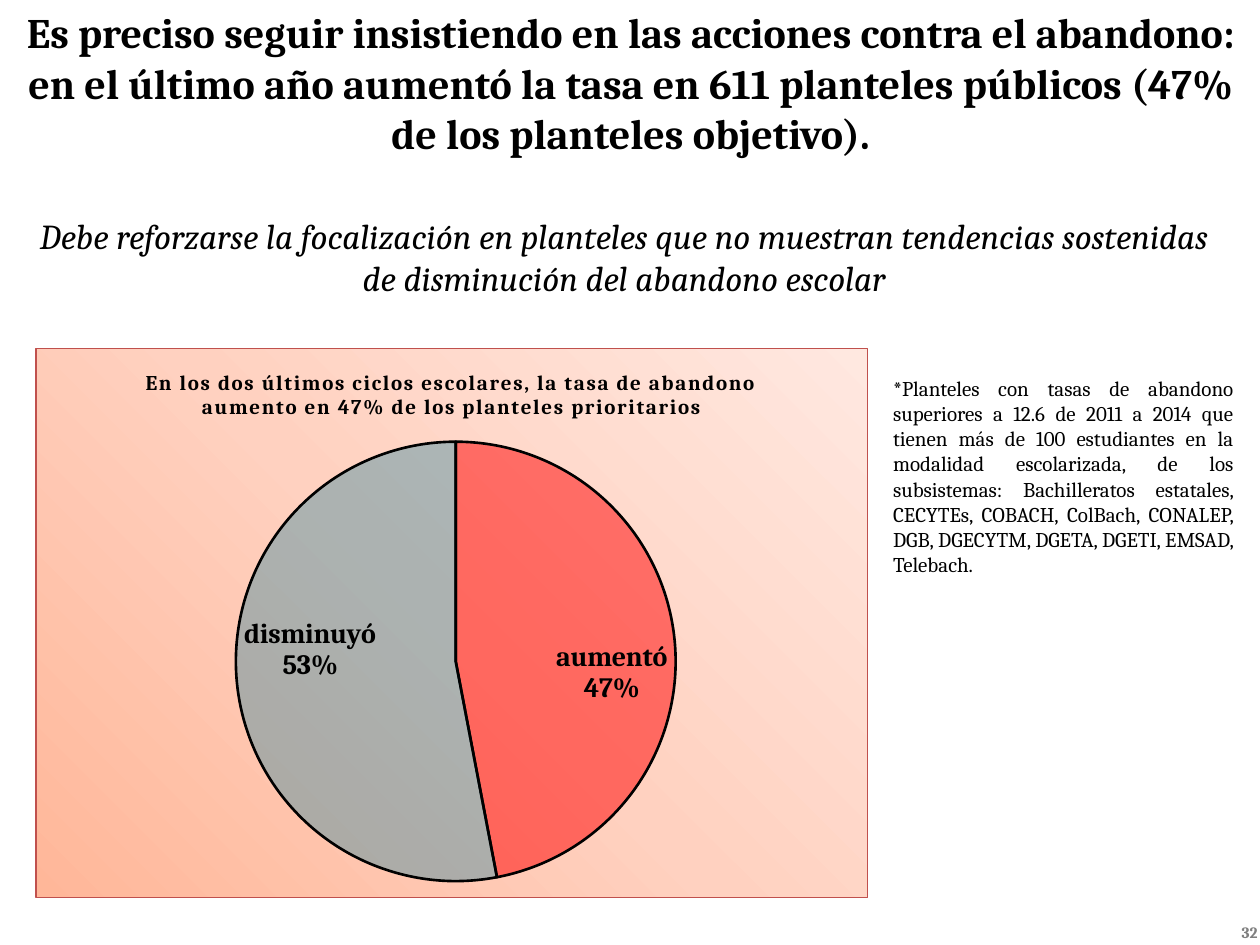
from dataclasses import dataclass, field

from lxml import etree
from pptx import Presentation
from pptx.chart.data import CategoryChartData
from pptx.dml.color import RGBColor
from pptx.enum.chart import XL_CHART_TYPE, XL_LABEL_POSITION
from pptx.enum.text import MSO_ANCHOR, PP_ALIGN
from pptx.oxml import parse_xml
from pptx.oxml.ns import nsdecls, qn
from pptx.util import Inches, Pt

FONT = "Cambria"
BLACK = RGBColor(0x00, 0x00, 0x00)
GRAY = RGBColor(0x80, 0x80, 0x80)
RED = RGBColor(0xFF, 0x00, 0x00)
TEAL = RGBColor(0x31, 0x85, 0x9C)
BORDER = RGBColor(0xC0, 0x50, 0x4D)
PEACH_STOPS = (
    (0, RGBColor(0xFF, 0xB7, 0x99)),
    (50, RGBColor(0xFF, 0xD1, 0xC0)),
    (100, RGBColor(0xFF, 0xE8, 0xE0)),
)


@dataclass
class TextBlock:
    text: str
    box: tuple[float, float, float, float]
    align: PP_ALIGN
    font: dict = field(default_factory=dict)
    anchor: MSO_ANCHOR = MSO_ANCHOR.TOP


@dataclass
class Slice:
    name: str
    percent: int
    color: RGBColor
    opacity: int


TEXTS = (
    TextBlock(
        "Es preciso seguir insistiendo en las acciones contra el abandono: en el "
        "último año aumentó la tasa en 611 planteles públicos (47% de los "
        "planteles objetivo).",
        (0.06, 0, 9.89, 1.31), PP_ALIGN.CENTER,
        {"size": Pt(24), "bold": True}, MSO_ANCHOR.MIDDLE,
    ),
    TextBlock(
        "*Planteles con tasas de abandono superiores a 12.6 de 2011 a 2014 que "
        "tienen más de 100 estudiantes en la modalidad escolarizada, de los "
        "subsistemas: Bachilleratos estatales, CECYTEs, COBACH, ColBach, CONALEP, "
        "DGB, DGECYTM, DGETA, DGETI, EMSAD, Telebach.",
        (6.99, 2.93, 2.9, 1.72), PP_ALIGN.JUSTIFY, {"size": Pt(12)},
    ),
    TextBlock(
        "Debe reforzarse la focalización en planteles que no muestran tendencias "
        "sostenidas de disminución del abandono escolar",
        (0.11, 1.65, 9.69, 0.77), PP_ALIGN.CENTER,
        {"size": Pt(20), "italic": True},
    ),
    TextBlock(
        "32", (7.75, 7.29, 2.33, 0.22), PP_ALIGN.RIGHT,
        {"size": Pt(9), "bold": True, "color": GRAY}, MSO_ANCHOR.MIDDLE,
    ),
)
CHART_TITLE = (
    "En los dos últimos ciclos escolares, la tasa de abandono aumento en 47% "
    "de los planteles prioritarios"
)
CHART_BOX = (0.28, 2.76, 6.61, 4.37)
PIE_AREA = {"x": 0.24, "y": 0.17, "w": 0.53, "h": 0.8}
SLICES = (
    Slice("aumentó", 47, RED, 50),
    Slice("disminuyó", 53, TEAL, 40),
)


def set_font(font, color: RGBColor = BLACK, **values) -> None:
    for name, value in {"name": FONT, **values}.items():
        setattr(font, name, value)
    font.color.rgb = color


def add_text(s, block: TextBlock) -> None:
    tf = s.shapes.add_textbox(*map(Inches, block.box)).text_frame
    tf.word_wrap = True
    tf.vertical_anchor = block.anchor
    p = tf.paragraphs[0]
    p.alignment = block.align
    r = p.add_run()
    r.text = block.text
    set_font(r.font, **block.font)


def add_title(chart, text: str) -> None:
    chart.has_title = True
    chart.chart_title.include_in_layout = False
    p = chart.chart_title.text_frame.paragraphs[0]
    r = p.add_run()
    r.text = text
    set_font(r.font, size=Pt(12), bold=True)
    for r_pr in chart.element.iter(qn("a:rPr")):
        r_pr.set("spc", "100")


def place_pie(chart, area: dict[str, float]) -> None:
    plot_area = chart.element.find(".//" + qn("c:plotArea"))
    for layout in plot_area.findall(qn("c:layout")):
        plot_area.remove(layout)
    layout = etree.Element(qn("c:layout"))
    manual = etree.SubElement(layout, qn("c:manualLayout"))
    settings = {"layoutTarget": "inner", "xMode": "edge", "yMode": "edge", **area}
    for name, value in settings.items():
        etree.SubElement(manual, qn(f"c:{name}")).set("val", str(value))
    plot_area.insert(0, layout)


def fill_background(chart) -> None:
    stops = "".join(
        f'<a:gs pos="{pos * 1000}"><a:srgbClr val="{color}"/></a:gs>'
        for pos, color in PEACH_STOPS
    )
    sp_pr = parse_xml(
        f'<c:spPr {nsdecls("c", "a")}><a:gradFill><a:gsLst>{stops}</a:gsLst>'
        f'<a:lin ang="{315 * 60000}" scaled="0"/></a:gradFill>'
        f'<a:ln w="{Pt(0.75)}"><a:solidFill><a:srgbClr val="{BORDER}"/>'
        "</a:solidFill></a:ln></c:spPr>"
    )
    chart.element.find(qn("c:txPr")).addprevious(sp_pr)


def color_slices(chart, slices: tuple[Slice, ...]) -> None:
    points = chart.plots[0].series[0].points
    for i, piece in enumerate(slices):
        fmt = points[i].format
        fmt.fill.solid()
        fmt.fill.fore_color.rgb = piece.color
        fmt.line.color.rgb = BLACK
        fmt.line.width = Pt(1.5)
    fills = chart.element.xpath(".//c:dPt/c:spPr/a:solidFill/a:srgbClr")
    for color, piece in zip(fills, slices):
        etree.SubElement(color, qn("a:alpha")).set("val", str(piece.opacity * 1000))


def add_pie(s, slices: tuple[Slice, ...]) -> None:
    data = CategoryChartData()
    data.categories = [piece.name for piece in slices]
    data.add_series("Series 1", [piece.percent for piece in slices])
    chart = s.shapes.add_chart(
        XL_CHART_TYPE.PIE, *map(Inches, CHART_BOX), data
    ).chart
    chart.has_legend = False
    set_font(chart.font, size=Pt(16))
    add_title(chart, CHART_TITLE)
    place_pie(chart, PIE_AREA)
    fill_background(chart)
    plot = chart.plots[0]
    plot.vary_by_categories = True
    color_slices(chart, slices)
    labels = plot.series[0].data_labels
    options = {
        "show_category_name": True,
        "show_percentage": True,
        "show_value": False,
        "show_legend_key": False,
        "number_format": "0%",
        "number_format_is_linked": False,
        "position": XL_LABEL_POSITION.INSIDE_END,
    }
    for name, value in options.items():
        setattr(labels, name, value)
    set_font(labels.font, size=Pt(16), bold=True)
    show_percent = labels.font and chart.element.find(
        ".//" + qn("c:ser") + "/" + qn("c:dLbls") + "/" + qn("c:showBubbleSize")
    )
    if show_percent is not None:
        separator = etree.Element(qn("c:separator"))
        separator.text = "\n"
        show_percent.addnext(separator)


def main() -> None:
    prs = Presentation()
    prs.slide_width, prs.slide_height = Inches(10), Inches(7.5)
    s = prs.slides.add_slide(prs.slide_layouts[6])
    title, note, subtitle, number = TEXTS
    add_text(s, title)
    add_text(s, note)
    add_pie(s, SLICES)
    add_text(s, subtitle)
    add_text(s, number)
    prs.save("out.pptx")


if __name__ == "__main__":
    main()
